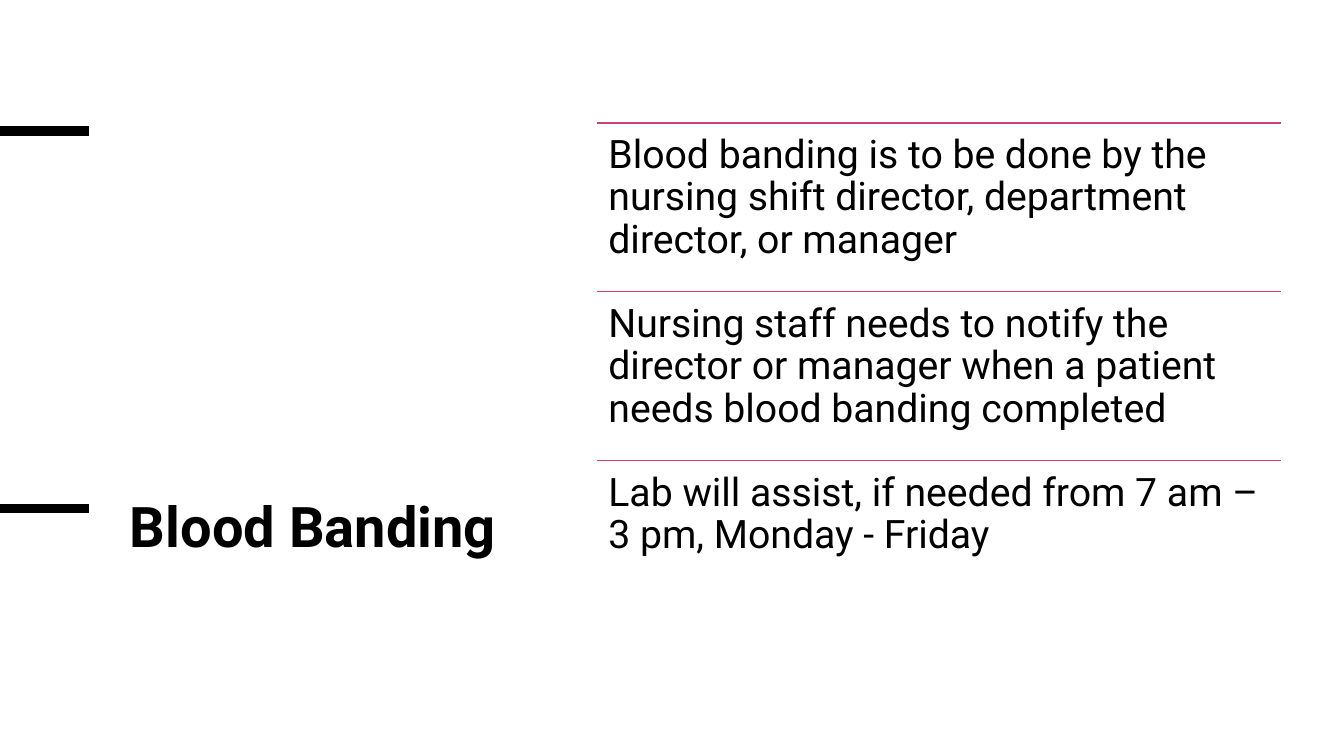
"""Build the Blood Banding slide: a title with side bars and three ruled statements."""
from dataclasses import dataclass

from lxml import etree
from pptx import Presentation
from pptx.dml.color import RGBColor
from pptx.enum.shapes import MSO_CONNECTOR
from pptx.enum.text import MSO_ANCHOR
from pptx.oxml.ns import qn
from pptx.util import Pt

STRAIGHT = MSO_CONNECTOR.STRAIGHT
TOP = MSO_ANCHOR.TOP

TITLE = "Blood Banding"
STATEMENTS = [
    "Blood banding is to be done by the nursing shift director, department director, or manager",
    "Nursing staff needs to notify the director or manager when a patient needs blood banding completed",
    "Lab will assist, if needed from 7 am – 3 pm, Monday - Friday",
]
SIDE_BARS = [(93.6, 6.75), (362.9, 6.5)]
BAR_LENGTH = 63.4
TITLE_BOX = (85.7, 355, 298, 141)
LIST_LEFT, LIST_TOP, LIST_WIDTH, ROW_HEIGHT = 426.2, 87.8, 489, 120.6


@dataclass(frozen=True)
class Theme:
    """Colours, font and type sizes."""
    ink: RGBColor = RGBColor(0x00, 0x00, 0x00)
    rule: RGBColor = RGBColor(0xCE, 0x42, 0x75)
    font: str = "Roboto"
    title_size: float = 40
    body_size: float = 28
    rule_weight: float = 1


THEME = Theme()


def add_rule(page, left, top, length, color, weight):
    """Draw a horizontal line without a shadow."""
    line = page.shapes.add_connector(STRAIGHT, Pt(left), Pt(top), Pt(left + length), Pt(top))
    line.line.color.rgb = color
    line.line.width = Pt(weight)
    etree.SubElement(line._element.spPr, qn("a:effectLst"))


def add_text(page, place, text, size, spacing, insets, bold=False):
    """Add a wrapped, top-anchored text box."""
    box = page.shapes.add_textbox(*(Pt(length) for length in place))
    frame = box.text_frame
    frame.text = text
    frame.word_wrap = True
    frame.vertical_anchor = TOP
    frame.margin_left = frame.margin_right = Pt(insets[0])
    frame.margin_top = frame.margin_bottom = Pt(insets[1])
    para = frame.paragraphs[0]
    para.line_spacing = spacing
    font = para.runs[0].font
    font.name = THEME.font
    font.size = Pt(size)
    font.bold = bold
    font.color.rgb = THEME.ink


def main():
    """Compose and save the slide."""
    deck = Presentation()
    deck.slide_width, deck.slide_height = Pt(960), Pt(540)
    page = deck.slides.add_slide(deck.slide_layouts[6])

    for top, weight in SIDE_BARS:
        add_rule(page, 0, top, BAR_LENGTH, THEME.ink, weight)
    add_text(page, TITLE_BOX, TITLE, THEME.title_size, 0.85, (7.2, 3.6), bold=True)

    for index, statement in enumerate(STATEMENTS):
        top = LIST_TOP + index * ROW_HEIGHT
        add_rule(page, LIST_LEFT, top, LIST_WIDTH, THEME.rule, THEME.rule_weight)
        place = (LIST_LEFT, top, LIST_WIDTH, ROW_HEIGHT)
        add_text(page, place, statement, THEME.body_size, 0.9, (8.4, 8.4))

    deck.save("out.pptx")


if __name__ == "__main__":
    main()
